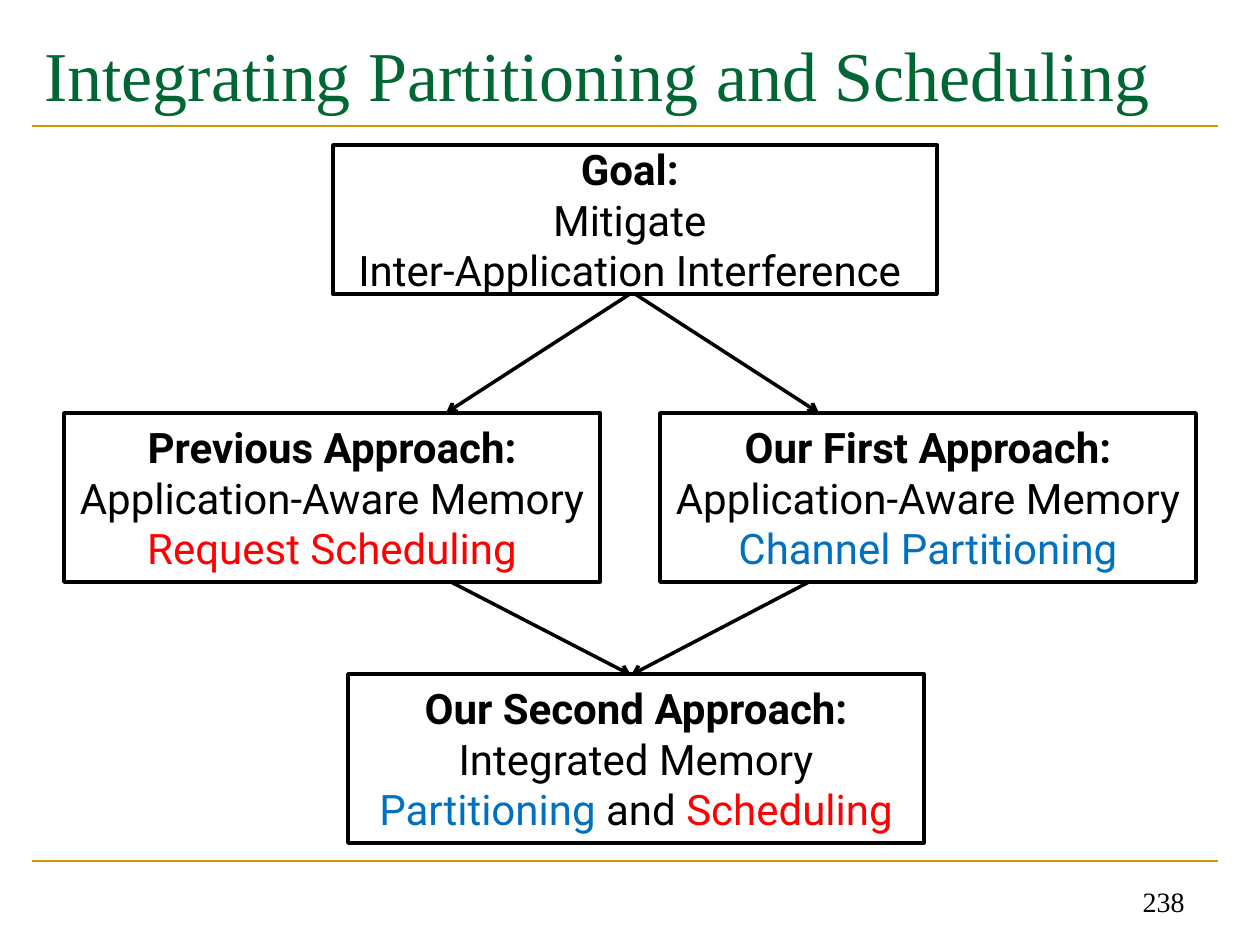
from pptx import Presentation
from pptx.dml.color import RGBColor
from pptx.enum.shapes import MSO_CONNECTOR, MSO_SHAPE
from pptx.enum.text import MSO_ANCHOR, PP_ALIGN
from pptx.oxml.ns import qn
from pptx.util import Emu, Pt
from lxml import etree

PX_PER_INCH = 126
RECTANGLE = MSO_SHAPE.RECTANGLE
STRAIGHT = MSO_CONNECTOR.STRAIGHT
LEFT, CENTER, RIGHT = PP_ALIGN.LEFT, PP_ALIGN.CENTER, PP_ALIGN.RIGHT
MIDDLE, BOTTOM = MSO_ANCHOR.MIDDLE, MSO_ANCHOR.BOTTOM
BOTTOM_SIDE = 2

COLORS = {
    "title": "006633",
    "rule": "CC9900",
    "ink": "000000",
    "scheduling": "FF0000",
    "partitioning": "0070C0",
}


def px(length):
    return Emu(round(length * 914400 / PX_PER_INCH))


def color(name):
    return RGBColor.from_string(COLORS[name])


def add_label(page, text, area, size, ink, align, anchor):
    box = page.shapes.add_textbox(*map(px, area))
    frame = box.text_frame
    frame.word_wrap = True
    frame.vertical_anchor = anchor
    para = frame.paragraphs[0]
    para.text = text
    para.alignment = align
    para.font.name = "Times New Roman"
    para.font.size = Pt(size)
    para.font.color.rgb = color(ink)


def add_box(page, area, heading, *lines):
    """Add an outlined box; each line is a list of (text, colour) spans."""
    box = page.shapes.add_shape(RECTANGLE, *map(px, area))
    box.shadow.inherit = False
    box.fill.background()
    box.line.color.rgb = color("ink")
    box.line.width = Pt(2)
    frame = box.text_frame
    frame.word_wrap = True
    frame.vertical_anchor = MIDDLE
    for index, spans in enumerate([[(heading, "ink")], *lines]):
        para = frame.paragraphs[0] if index == 0 else frame.add_paragraph()
        para.alignment = CENTER
        para.font.name = "Roboto"
        para.font.size = Pt(24)
        para.font.bold = index == 0
        for text, ink in spans:
            span = para.add_run()
            span.text = text
            span.font.color.rgb = color(ink)
    return box


def add_line(page, start, end, ink, width):
    line = page.shapes.add_connector(STRAIGHT, *map(px, start + end))
    line.line.color.rgb = color(ink)
    line.line.width = Pt(width)
    etree.SubElement(line._element.spPr, qn("a:effectLst"))
    return line


def add_arrow(page, start, end):
    arrow = add_line(page, start, end, "ink", 2)
    etree.SubElement(arrow.line._get_or_add_ln(), qn("a:tailEnd"), type="arrow")
    return arrow


def main():
    deck = Presentation()
    deck.slide_width, deck.slide_height = px(1260), px(945)
    page = deck.slides.add_slide(deck.slide_layouts[6])

    # Title, rules and page number
    for y in (126, 861):
        add_line(page, (32, y), (1218, y), "rule", 1.5)
    add_label(page, "Integrating Partitioning and Scheduling",
              (32, 21, 1187, 105), 40, "title", LEFT, MIDDLE)
    add_label(page, "238", (903, 861, 294, 63), 16, "ink", RIGHT, BOTTOM)

    # Goal, two approaches side by side, and their combination
    goal = add_box(page, (333, 145, 604, 149), "Goal: ",
                   [("Mitigate ", "ink")],
                   [("Inter-Application Interference ", "ink")])
    approaches = (
        (64, "Previous Approach:", "Request Scheduling", "scheduling"),
        (660, "Our First Approach:", "Channel Partitioning", "partitioning"),
    )
    for left, heading, method, ink in approaches:
        add_box(page, (left, 413, 536, 169), heading,
                [("Application-Aware Memory", "ink")], [(method, ink)])
    add_box(page, (348, 674, 576, 169), "Our Second Approach:",
            [("Integrated Memory", "ink")],
            [("Partitioning", "partitioning"), (" and ", "ink"),
             ("Scheduling", "scheduling")])

    # Arrows from the goal to the approaches, then to the combination
    add_arrow(page, (630, 294), (446, 413))
    to_first = add_arrow(page, (635, 294), (819, 413))
    to_first.begin_connect(goal, BOTTOM_SIDE)
    for x in (451, 809):
        add_arrow(page, (x, 582), (631, 675))

    deck.save("out.pptx")


if __name__ == "__main__":
    main()
